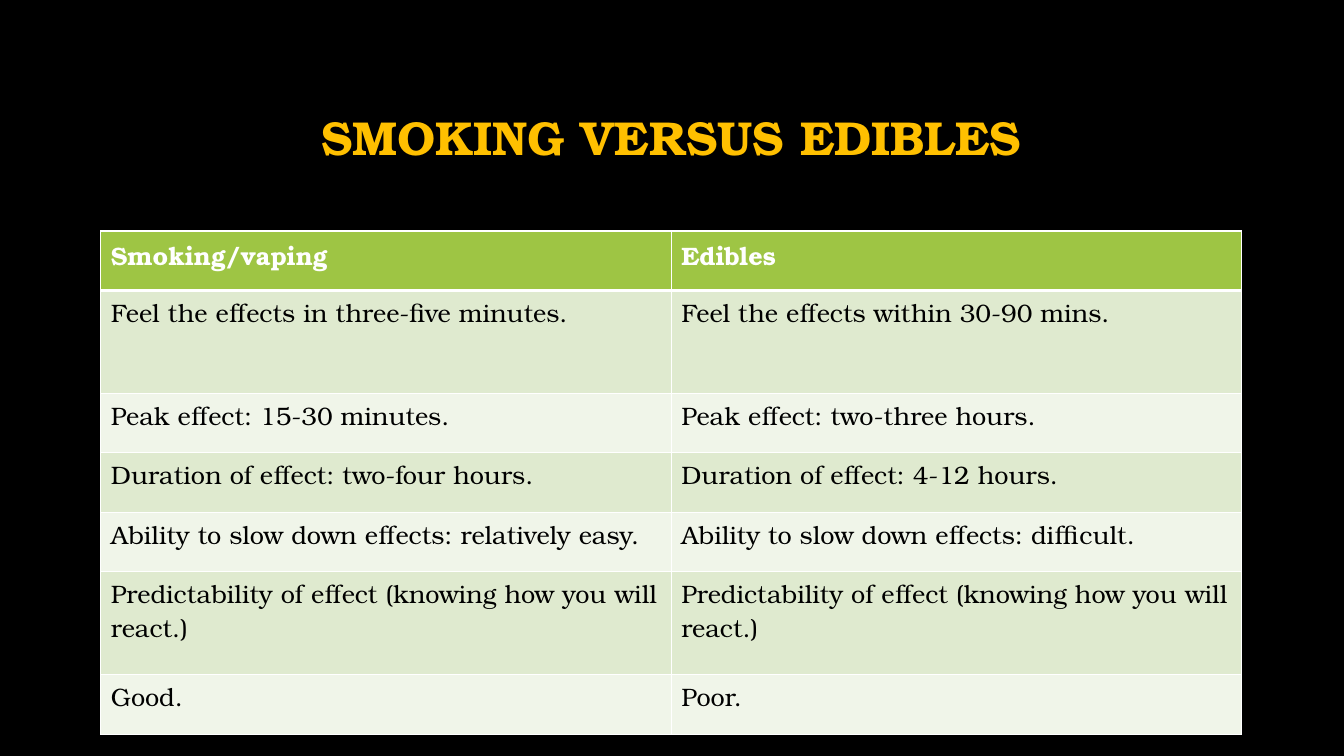
from lxml.etree import SubElement
from pptx import Presentation
from pptx.dml.color import RGBColor
from pptx.enum.text import MSO_ANCHOR, PP_ALIGN
from pptx.oxml.ns import qn
from pptx.util import Cm, Pt

FONT = "TeX Gyre Bonum"
HEADER_FILL, BAND_FILLS = "9EC544", ("DFEACF", "F0F5E9")
SHORT_ROW, TALL_ROW = 1.5, 2.59
TALL_ROWS = (1, 5)
COMPARISON = [
    ("Smoking/vaping", "Edibles"),
    ("Feel the effects in three-five minutes.", "Feel the effects within 30-90 mins."),
    ("Peak effect: 15-30 minutes.", "Peak effect: two-three hours."),
    ("Duration of effect: two-four hours.", "Duration of effect: 4-12 hours."),
    ("Ability to slow down effects: relatively easy.",
     "Ability to slow down effects: difficult."),
    ("Predictability of effect (knowing how you will react.)",) * 2,
    ("Good.", "Poor."),
]


def color(value):
    return RGBColor.from_string(value)


def write(para, text, size, shade, bold):
    span = para.add_run()
    span.text = text
    for name, value in {"name": FONT, "size": Pt(size), "bold": bold}.items():
        setattr(span.font, name, value)
    span.font.color.rgb = color(shade)


def add_borders(cell, widths, shade="FFFFFF"):
    """Draw borders from a dict of side letter (L, R, T, B) to points."""
    properties = cell._tc.get_or_add_tcPr()
    for side, width in widths.items():
        line = SubElement(properties, qn(f"a:ln{side}"), w=str(Pt(width)))
        fill = SubElement(line, qn("a:solidFill"))
        SubElement(fill, qn("a:srgbClr"), val=shade)


def place_title(page, left, top, width, height):
    title = page.shapes.title
    box = {"left": left, "top": top, "width": width, "height": height}
    for name, value in box.items():
        setattr(title, name, Cm(value))
    title.text_frame.vertical_anchor = MSO_ANCHOR.MIDDLE
    para = title.text_frame.paragraphs[0]
    para.alignment, para.line_spacing = PP_ALIGN.CENTER, 0.9
    write(para, "SMOKING VERSUS EDIBLES", 34, "FFC000", True)


def place_comparison(page, left, top, width):
    heights = [TALL_ROW if row in TALL_ROWS else SHORT_ROW
               for row in range(len(COMPARISON))]
    table = page.shapes.add_table(len(COMPARISON), 2, Cm(left), Cm(top),
                                  Cm(width), Cm(sum(heights))).table
    for column in table.columns:
        column.width = Cm(width / 2)
    for row, texts in enumerate(COMPARISON):
        table.rows[row].height = Cm(heights[row])
        header = row == 0
        widths = {"L": 1, "R": 1, "T": 3 if row == 1 else 1, "B": 3 if header else 1}
        for column, text in enumerate(texts):
            cell = table.cell(row, column)
            add_borders(cell, widths)
            cell.fill.solid()
            cell.fill.fore_color.rgb = color(
                HEADER_FILL if header else BAND_FILLS[(row - 1) % 2])
            write(cell.text_frame.paragraphs[0], text, 18,
                  "FFFFFF" if header else "000000", header)


def build_comparison_page(deck):
    page = deck.slides.add_slide(deck.slide_layouts[5])
    page.background.fill.solid()
    page.background.fill.fore_color.rgb = color("000000")
    place_title(page, 2.54, 1.7, 28.75, 3.68)
    place_comparison(page, 2.54, 5.82, 28.75)


def main():
    deck = Presentation()
    deck.slide_width, deck.slide_height = Cm(33.87), Cm(19.05)
    build_comparison_page(deck)
    deck.save("out.pptx")


if __name__ == "__main__":
    main()
